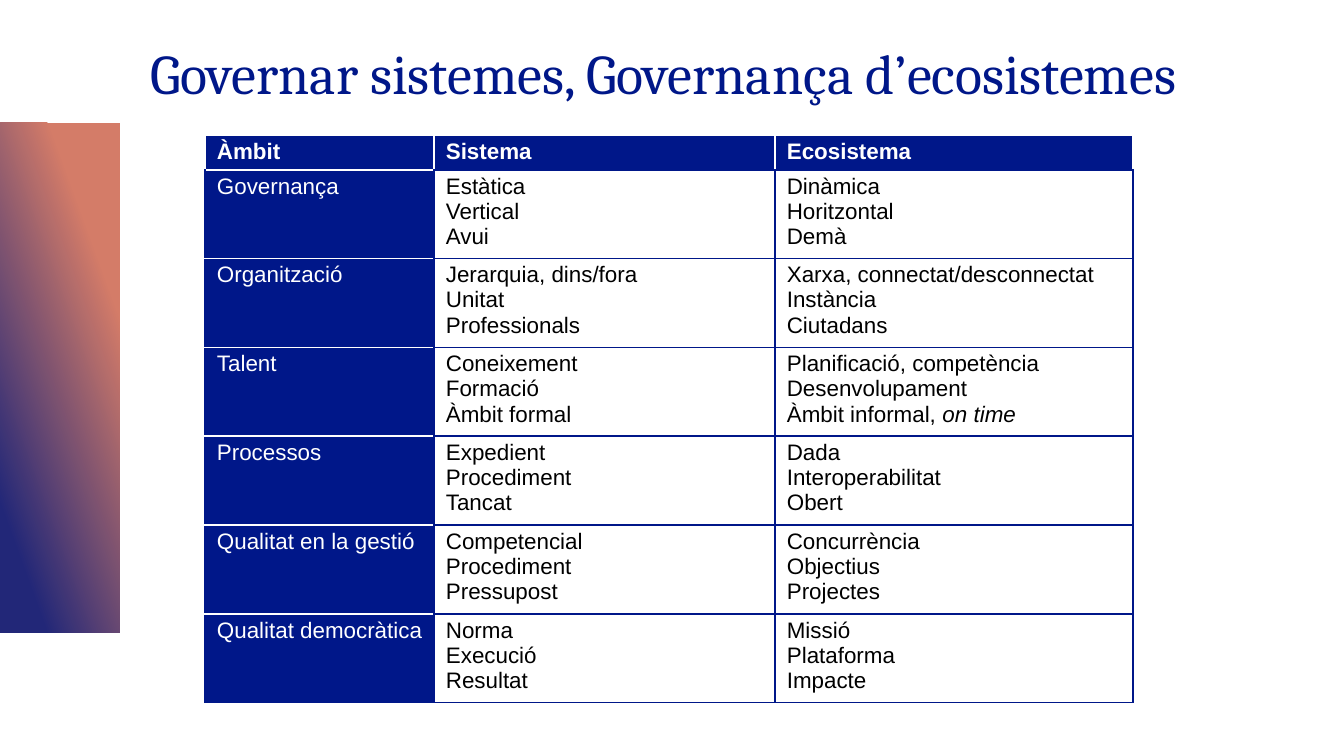
from dataclasses import dataclass

from lxml.etree import SubElement
from pptx import Presentation
from pptx.dml.color import RGBColor
from pptx.enum.shapes import MSO_SHAPE
from pptx.enum.text import MSO_ANCHOR
from pptx.oxml.ns import qn
from pptx.util import Emu, Pt

SCALE = 914400 / 134.4
NAVY, WHITE, BLACK = "001789", "FFFFFF", "000000"
CORAL, INDIGO = "D47C68", "222778"
WIDTHS = (229, 341, 358)
HEIGHTS = (35,) + (88, 89) * 3


@dataclass
class Row:
    area: str
    system: str
    eco: str


@dataclass
class Look:
    fill: str
    ink: str
    edges: dict[str, str]
    bold: bool = False


# Lines are split at "\n"; text after "|" is italic.
HEAD = Row("Àmbit", "Sistema", "Ecosistema")
BODY = [
    Row("Governança", "Estàtica\nVertical\nAvui", "Dinàmica\nHoritzontal\nDemà"),
    Row("Organització", "Jerarquia, dins/fora\nUnitat\nProfessionals",
        "Xarxa, connectat/desconnectat\nInstància\nCiutadans"),
    Row("Talent", "Coneixement\nFormació\nÀmbit formal",
        "Planificació, competència\nDesenvolupament\nÀmbit informal, |on time"),
    Row("Processos", "Expedient\nProcediment\nTancat",
        "Dada\nInteroperabilitat\nObert"),
    Row("Qualitat en la gestió", "Competencial\nProcediment\nPressupost",
        "Concurrència\nObjectius\nProjectes"),
    Row("Qualitat democràtica", "Norma\nExecució\nResultat",
        "Missió\nPlataforma\nImpacte"),
]


def px(n: int) -> Emu:
    return Emu(round(n * SCALE))


def color(code: str) -> RGBColor:
    return RGBColor.from_string(code)


def add_run(para, text: str, size: int, face: str, ink: str,
            bold: bool = False, italic: bool = False) -> None:
    run = para.add_run()
    run.text = text
    font = run.font
    font.size, font.name = Pt(size), face
    font.bold, font.italic = bold, italic
    font.color.rgb = color(ink)


def add_edges(cell, edges: dict[str, str]) -> None:
    """Draw cell borders; call before the fill is set, as the schema asks."""
    props = cell._tc.get_or_add_tcPr()
    for side in "LRTB":
        line = SubElement(props, qn(f"a:ln{side}"), w=str(Pt(1)))
        solid = SubElement(line, qn("a:solidFill"))
        SubElement(solid, qn("a:srgbClr"), val=edges[side])


def fill_cell(cell, text: str, look: Look) -> None:
    add_edges(cell, look.edges)
    cell.fill.solid()
    cell.fill.fore_color.rgb = color(look.fill)
    cell.margin_left, cell.margin_right = px(12), px(8)
    cell.margin_top = cell.margin_bottom = px(4)
    frame = cell.text_frame
    for i, line in enumerate(text.split("\n")):
        para = frame.add_paragraph() if i else frame.paragraphs[0]
        for j, part in enumerate(line.split("|")):
            add_run(para, part, 12, "Arial", look.ink, look.bold, j == 1)


def pick_look(row: int, col: int) -> Look:
    if row == 0:
        base = WHITE if col == 0 else NAVY
        return Look(NAVY, WHITE, dict(L=WHITE, R=WHITE, T=WHITE, B=base), True)
    if col == 0:
        base = NAVY if row == len(BODY) else WHITE
        return Look(NAVY, WHITE, dict(L=NAVY, R=NAVY, T=WHITE, B=base))
    return Look(WHITE, BLACK, dict.fromkeys("LRTB", NAVY))


def add_band(slide) -> None:
    band = slide.shapes.add_shape(
        MSO_SHAPE.RECTANGLE, px(-195), px(318), px(510), px(120))
    band.shadow.inherit = False
    band.line.fill.background()
    band.rotation = 90
    band._element.spPr.xfrm.set("flipV", "1")
    band.fill.gradient()
    band.fill.gradient_angle = 70
    stops = band.fill.gradient_stops
    for stop, place, code in zip(stops, (0.23, 0.85), (CORAL, INDIGO)):
        stop.position = place
        stop.color.rgb = color(code)


def add_title(slide) -> None:
    box = slide.shapes.add_textbox(px(137), px(34), px(1218), px(79))
    frame = box.text_frame
    frame.word_wrap = True
    frame.vertical_anchor = MSO_ANCHOR.BOTTOM
    para = frame.paragraphs[0]
    para.line_spacing = 0.9
    add_run(para, "Governar sistemes, Governança d’ecosistemes", 30, "Cambria", NAVY)


def add_grid(slide) -> None:
    rows = [HEAD, *BODY]
    table = slide.shapes.add_table(
        len(rows), len(WIDTHS), px(205), px(135),
        px(sum(WIDTHS)), px(sum(HEIGHTS))).table
    table.first_row = table.horz_banding = False
    for col, width in zip(table.columns, WIDTHS):
        col.width = px(width)
    for line, height in zip(table.rows, HEIGHTS):
        line.height = px(height)
    for r, row in enumerate(rows):
        for c, text in enumerate((row.area, row.system, row.eco)):
            fill_cell(table.cell(r, c), text, pick_look(r, c))


def main() -> None:
    deck = Presentation()
    deck.slide_width, deck.slide_height = px(1344), px(756)
    slide = deck.slides.add_slide(deck.slide_layouts[6])
    add_band(slide)
    add_title(slide)
    add_grid(slide)
    deck.save("out.pptx")


if __name__ == "__main__":
    main()
